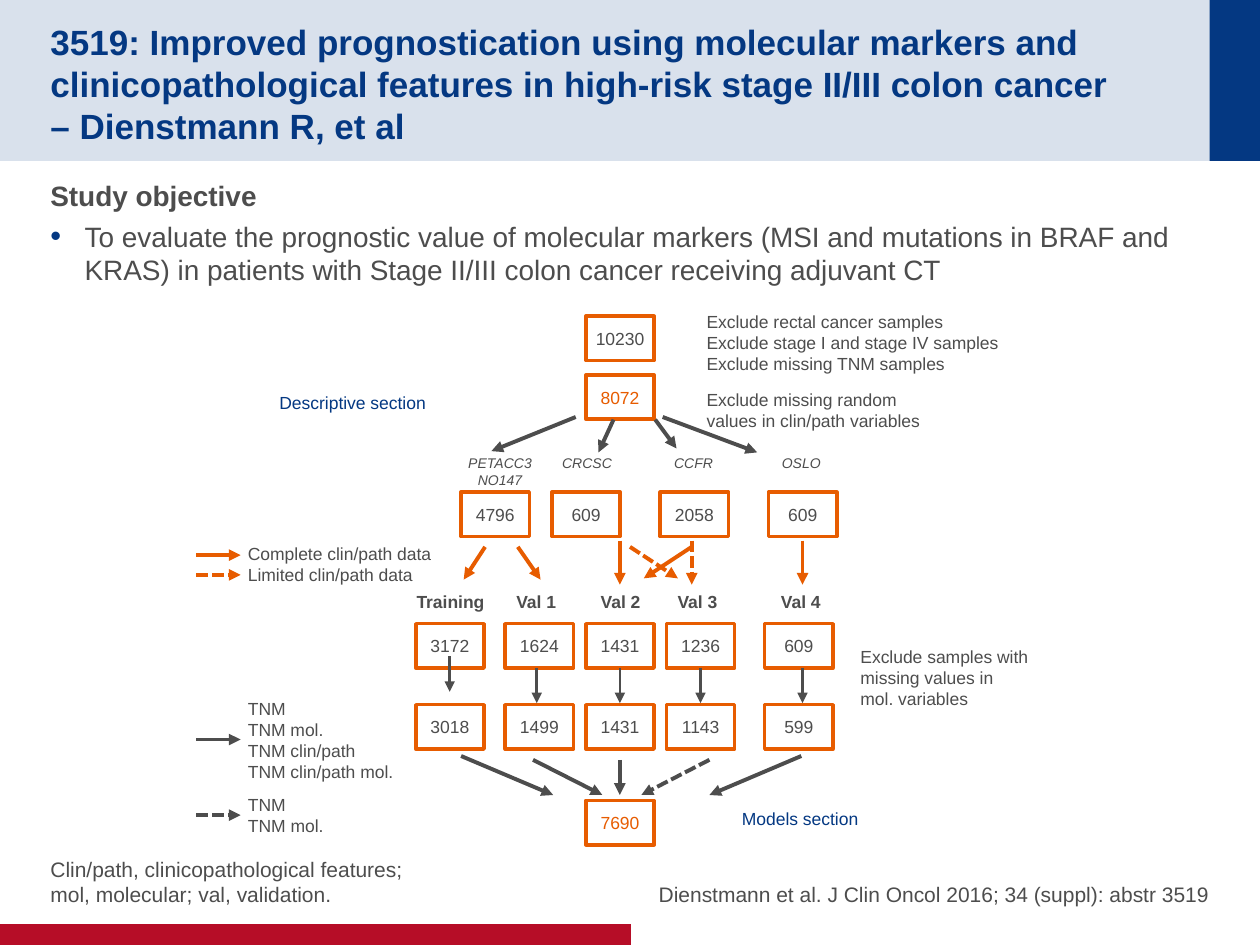
import pptx
import pptx.util
import pptx.dml.color
import pptx.enum.dml
import pptx.enum.shapes
import pptx.enum.text
import pptx.oxml
import pptx.oxml.ns
import lxml.etree

Pt = pptx.util.Pt
qn = pptx.oxml.ns.qn
ALIGN = pptx.enum.text.PP_ALIGN
ANCHOR = pptx.enum.text.MSO_ANCHOR
RECT = pptx.enum.shapes.MSO_SHAPE.RECTANGLE
NAVY, RED, GREY, ORANGE = "043882", "B60D27", "4D4D4D", "E75C00"


def rgb(value):
    return pptx.dml.color.RGBColor.from_string(value)


def write(sp, paras, size, color=GREY, bold=False, italic=False, align=ALIGN.LEFT,
          anchor=ANCHOR.TOP, insets=(7.2, 3.6, 7.2, 3.6), wrap=True, after=0):
    """Fill a shape with paragraphs; a newline inside one is a line break."""
    tf = sp.text_frame
    tf.word_wrap = wrap
    tf.vertical_anchor = anchor
    tf.margin_left, tf.margin_top, tf.margin_right, tf.margin_bottom = map(Pt, insets)
    for i, para in enumerate(paras):
        p = tf.paragraphs[0] if i == 0 else tf.add_paragraph()
        p.alignment = align
        p.space_after = Pt(after)
        for j, line in enumerate(para.split("\n")):
            if j:
                p.add_line_break()
            r = p.add_run()
            r.text = line
            r.font.name = "Arial"
            r.font.size = Pt(size)
            r.font.bold = bold
            r.font.italic = italic
            r.font.color.rgb = rgb(color)
    return tf


prs = pptx.Presentation()
prs.slide_width, prs.slide_height = Pt(720), Pt(540)
s = prs.slides.add_slide(prs.slide_layouts[6])

# Header band, corner block and footer bar
for x, y, w, h, color, opacity in [
    (0, 0, 720, 92, NAVY, 15),
    (691.2, 0, 28.8, 92, NAVY, 100),
    (0, 528, 360.6, 12, RED, 100),
]:
    sp = s.shapes.add_shape(RECT, Pt(x), Pt(y), Pt(w), Pt(h))
    sp.shadow.inherit = False
    sp.fill.solid()
    sp.fill.fore_color.rgb = rgb(color)
    sp.line.fill.background()
    if opacity < 100:
        clr = sp.fill._xPr.find(qn("a:solidFill"))[0]
        lxml.etree.SubElement(clr, qn("a:alpha")).set("val", str(opacity * 1000))

# Title
sp = s.shapes.add_textbox(Pt(28.8), Pt(14.4), Pt(648.7), Pt(63.4))
write(sp, ["3519: Improved prognostication using molecular markers and clinicopathological "
           "features in high-risk stage II/III colon cancer \n– Dienstmann R, et al"],
      20, NAVY, bold=True, anchor=ANCHOR.MIDDLE, insets=(0, 3.6, 0, 0))

# Study objective with its bullet
sp = s.shapes.add_textbox(Pt(28.8), Pt(98.6), Pt(662.4), Pt(373.7))
tf = write(sp, ["Study objective",
                "To evaluate the prognostic value of molecular markers (MSI and mutations in BRAF "
                "and KRAS) in patients with Stage II/III colon cancer receiving adjuvant CT"],
           16, insets=(0, 3.6, 0, 3.6), after=4)
tf.paragraphs[0].runs[0].font.bold = True
pPr = tf.paragraphs[1]._p.get_or_add_pPr()
pPr.set("marL", str(Pt(19.6)))
pPr.set("indent", str(-Pt(19.6)))
buClr = lxml.etree.SubElement(pPr, qn("a:buClr"))
lxml.etree.SubElement(buClr, qn("a:srgbClr")).set("val", NAVY)
lxml.etree.SubElement(pPr, qn("a:buSzPct")).set("val", "110000")
lxml.etree.SubElement(pPr, qn("a:buFont")).set("typeface", "Arial")
lxml.etree.SubElement(pPr, qn("a:buChar")).set("char", "•")

# Abbreviations and citation
for x, y, h, align, text in [
    (28.8, 499.7, 18.7, ALIGN.LEFT,
     "Clin/path, clinicopathological features; \nmol, molecular; val, validation."),
    (365.8, 480.2, 38.2, ALIGN.RIGHT,
     "Dienstmann et al. J Clin Oncol 2016; 34 (suppl): abstr 3519"),
]:
    sp = s.shapes.add_textbox(Pt(x), Pt(y), Pt(325.4), Pt(h))
    write(sp, [text], 12, align=align, anchor=ANCHOR.BOTTOM, insets=(0, 0, 0, 0), after=4)

# Section names, exclusion notes and legend texts
for x, y, w, h, color, paras in [
    (152.6, 220.3, 98.6, 19.4, NAVY, ["Descriptive section"]),
    (416.9, 457.9, 81.4, 19.4, NAVY, ["Models section"]),
    (396.7, 174.2, 182.2, 43.9, GREY,
     ["Exclude rectal cancer samples", "Exclude stage I and stage IV samples",
      "Exclude missing TNM samples"]),
    (396.7, 218.9, 144, 31.7, GREY, ["Exclude missing random values in clin/path variables"]),
    (484.6, 365.8, 133.9, 43.9, GREY,
     ["Exclude samples with missing values in \nmol. variables"]),
    (134.6, 306.7, 133.9, 31.7, GREY, ["Complete clin/path data\nLimited clin/path data"]),
    (134.6, 395.3, 133.9, 55.4, GREY,
     ["TNM", "TNM mol.", "TNM clin/path", "TNM clin/path mol."]),
    (134.6, 450, 85, 31.7, GREY, ["TNM", "TNM mol."]),
]:
    sp = s.shapes.add_textbox(Pt(x), Pt(y), Pt(w), Pt(h))
    write(sp, paras, 10, color)

# Cohort names and data set names, centred on their columns
for y, h, size, bold, labels in [
    (256.3, 17.3, 8, False, [(285.8, 52, "PETACC3\nNO147"), (335.5, 43, "CRCSC"),
                             (396.4, 37, "CCFR"), (457.9, 37, "OSLO")]),
    (334.1, 19.4, 10, True, [(257.4, 54, "Training"), (306.4, 38, "Val 1"),
                             (354.6, 38, "Val 2"), (398.5, 38, "Val 3"), (457.6, 38, "Val 4")]),
]:
    for center, w, text in labels:
        sp = s.shapes.add_textbox(Pt(center - w / 2), Pt(y), Pt(w), Pt(h))
        write(sp, [text], size, bold=bold, italic=not bold, align=ALIGN.CENTER, wrap=False)

# Sample count boxes, row by row
middle = [334.8]
cohorts = [263.5, 315.4, 377.3, 439.2]
sets = [237.6, 288.7, 334.8, 380.9, 437]
for y, color, lefts, counts in [
    (180.7, GREY, middle, ["10230"]),
    (214.2, ORANGE, middle, ["8072"]),
    (281.2, GREY, cohorts, ["4796", "609", "2058", "609"]),
    (356.4, GREY, sets, ["3172", "1624", "1431", "1236", "609"]),
    (402.7, GREY, sets, ["3018", "1499", "1431", "1143", "599"]),
    (457.4, ORANGE, middle, ["7690"]),
]:
    for x, count in zip(lefts, counts):
        sp = s.shapes.add_shape(RECT, Pt(x), Pt(y), Pt(39), Pt(25.4))
        sp.shadow.inherit = False
        sp.fill.background()
        sp.line.color.rgb = rgb(ORANGE)
        sp.line.width = Pt(2)
        write(sp, [count], 10, color, align=ALIGN.CENTER, anchor=ANCHOR.MIDDLE,
              insets=(0, 0, 0, 0), wrap=False)

# Arrows: colour, width, dashed, then start and end points
for color, width, dashed, ends in [
    # legend, pooled set to cohorts, data sets to models
    (GREY, 2.25, False, [
        (112.3, 422.6, 137.5, 422.6),
        (329, 238.3, 280.8, 257.8), (350.6, 239.8, 342, 258.5),
        (378.7, 238.3, 432.7, 258.5), (374.4, 239.8, 386.6, 256.3),
        (354.2, 434.2, 354.2, 454.3), (457.9, 432, 405.4, 454.3),
        (263.5, 432, 316.1, 454.3), (304.6, 434.2, 344.2, 454.3)]),
    (GREY, 2.25, True, [(112.3, 465.8, 137.5, 465.8), (405.4, 434.2, 366.5, 454.3)]),
    # legend, cohorts to data sets
    (ORANGE, 2.25, False, [
        (112.3, 317.2, 137.5, 317.2),
        (277.2, 312.5, 265, 331.2), (295.9, 312.5, 308.9, 331.2),
        (458.6, 308.9, 458.6, 334.1), (354.2, 308.9, 354.2, 334.1),
        (395.3, 312.5, 367.9, 330.5)]),
    (ORANGE, 2.25, True, [
        (112.3, 328.5, 137.5, 328.5),
        (395.3, 308.9, 395.3, 334.1), (360, 312.5, 387.4, 330.5)]),
    # data sets before and after exclusion
    (GREY, 1.5, False, [(257, 375.1, 257, 395.3)] + [
        (x, 381.6, x, 401.8) for x in (306.7, 354.2, 400.3, 458.6)]),
]:
    for x1, y1, x2, y2 in ends:
        c = s.shapes.add_connector(pptx.enum.shapes.MSO_CONNECTOR.STRAIGHT,
                                   Pt(x1), Pt(y1), Pt(x2), Pt(y2))
        c.line.color.rgb = rgb(color)
        c.line.width = Pt(width)
        if dashed:
            c.line.dash_style = pptx.enum.dml.MSO_LINE.SQUARE_DOT
        ln = c.line._get_or_add_ln()
        lxml.etree.SubElement(ln, qn("a:tailEnd")).set("type", "triangle")
        lxml.etree.SubElement(c._element.spPr, qn("a:effectLst"))

prs.save("out.pptx")
